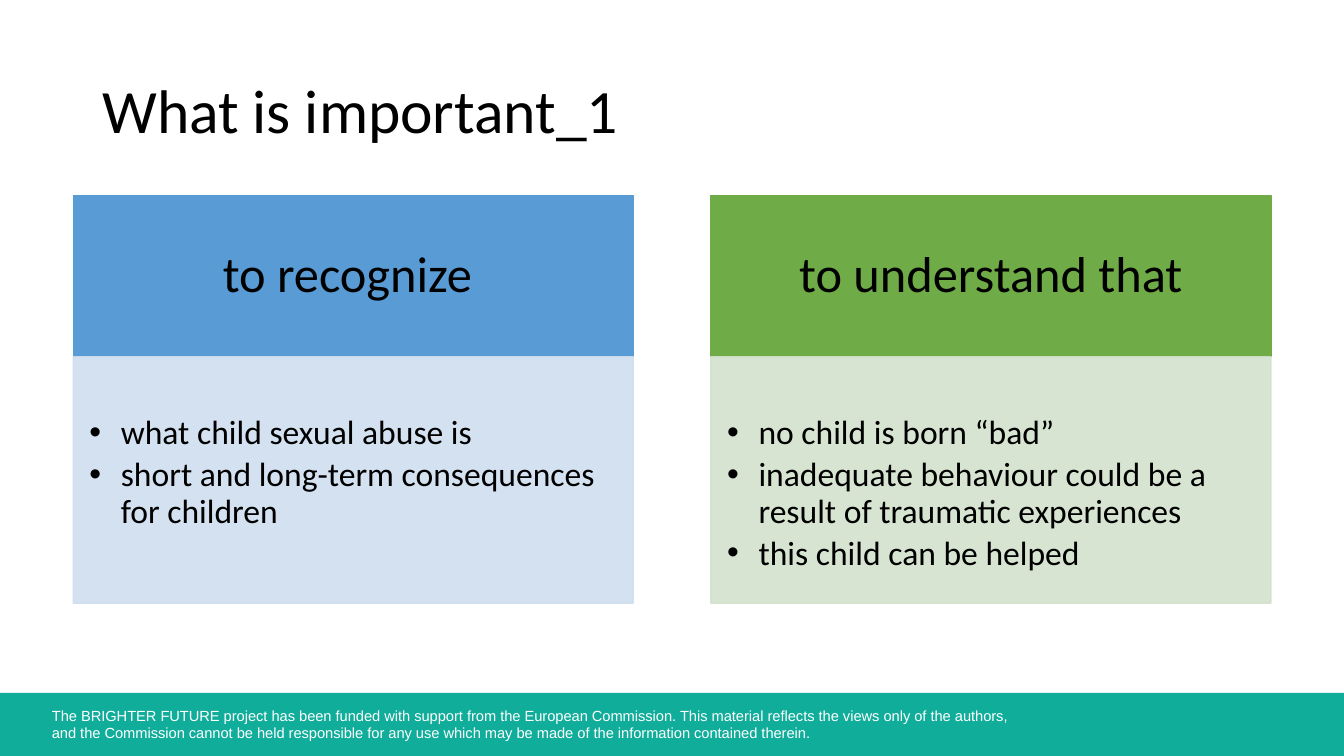
import pptx
import pptx.util
import pptx.dml.color
import pptx.enum.shapes
import pptx.enum.text
import pptx.oxml.ns
import lxml.etree

Pt = pptx.util.Pt
RGBColor = pptx.dml.color.RGBColor
PP_ALIGN = pptx.enum.text.PP_ALIGN
MSO_ANCHOR = pptx.enum.text.MSO_ANCHOR
qn = pptx.oxml.ns.qn

BLACK = RGBColor(0x00, 0x00, 0x00)
WHITE = RGBColor(0xFF, 0xFF, 0xFF)
TEAL = RGBColor(0x10, 0xAD, 0x9A)
BLUE = RGBColor(0x59, 0x9B, 0xD5)
PALE_BLUE = RGBColor(0xCF, 0xDE, 0xEF)
GREEN = RGBColor(0x6F, 0xAB, 0x46)
PALE_GREEN = RGBColor(0xD3, 0xE1, 0xCC)


def add_panel(left, top, width, height, color, opacity=100):
    panel = slide.shapes.add_shape(
        pptx.enum.shapes.MSO_SHAPE.RECTANGLE, Pt(left), Pt(top), Pt(width), Pt(height))
    panel.shadow.inherit = False
    panel.fill.solid()
    panel.fill.fore_color.rgb = color
    panel.line.color.rgb = color
    panel.line.width = Pt(1)
    if opacity < 100:
        for tint in panel.element.spPr.iter(qn("a:srgbClr")):
            lxml.etree.SubElement(tint, qn("a:alpha"), val=str(opacity * 1000))
    panel.text_frame.word_wrap = True
    return panel


def add_span(para, text, size, color=BLACK, font="Calibri"):
    span = para.add_run()
    span.text = text
    span.font.size = Pt(size)
    span.font.name = font
    span.font.color.rgb = color


deck = pptx.Presentation()
deck.slide_width = Pt(960)
deck.slide_height = Pt(540)
slide = deck.slides.add_slide(deck.slide_layouts[6])

footer = add_panel(0, 495, 960, 45, TEAL)
footer.line.fill.background()

notice = slide.shapes.add_textbox(Pt(30), Pt(501), Pt(720), Pt(32.5))
notice.text_frame.word_wrap = True
para = notice.text_frame.paragraphs[0]
add_span(para, "The BRIGHTER FUTURE project has been funded with support from the European "
         "Commission. This material reflects the views only of the authors, ", 10.5, WHITE, "Arial")
para.add_line_break()
add_span(para, "and the Commission cannot be held responsible for any use which may be made "
         "of the information contained therein.", 10.5, WHITE, "Arial")

title = slide.shapes.add_textbox(Pt(66), Pt(28.75), Pt(828), Pt(104.4))
title.text_frame.word_wrap = True
title.text_frame.vertical_anchor = MSO_ANCHOR.MIDDLE
para = title.text_frame.paragraphs[0]
para.line_spacing = 0.9
add_span(para, "What is important_1", 44)

columns = [
    ("to recognize ", BLUE, PALE_BLUE, [
        "what child sexual abuse is",
        "short and long-term consequences for children"]),
    ("to understand that", GREEN, PALE_GREEN, [
        "no child is born “bad”",
        "inadequate behaviour could be a result of traumatic experiences",
        "this child can be helped"]),
]
COLUMN_LEFT, COLUMN_STEP, COLUMN_WIDTH = 52.3, 455.5, 400
HEADING_TOP, HEADING_HEIGHT, LIST_HEIGHT = 139.5, 115.3, 176

for index, (heading, strong, pale, points) in enumerate(columns):
    left = COLUMN_LEFT + index * COLUMN_STEP

    header = add_panel(left, HEADING_TOP, COLUMN_WIDTH, HEADING_HEIGHT, strong)
    header.text_frame.vertical_anchor = MSO_ANCHOR.MIDDLE
    para = header.text_frame.paragraphs[0]
    para.alignment = PP_ALIGN.CENTER
    para.line_spacing = 0.9
    add_span(para, heading, 36)

    body = add_panel(left, HEADING_TOP + HEADING_HEIGHT, COLUMN_WIDTH, LIST_HEIGHT, pale, 89)
    frame = body.text_frame
    frame.vertical_anchor = MSO_ANCHOR.TOP
    frame.margin_left = Pt(11.5)
    frame.margin_right = Pt(16)
    frame.margin_top = Pt(42)
    frame.margin_bottom = Pt(0)
    for number, point in enumerate(points):
        para = frame.add_paragraph() if number else frame.paragraphs[0]
        props = para._p.get_or_add_pPr()
        props.set("marL", str(Pt(22.5)))
        props.set("indent", str(-Pt(22.5)))
        bullet_color = lxml.etree.SubElement(props, qn("a:buClr"))
        lxml.etree.SubElement(bullet_color, qn("a:srgbClr"), val=str(BLACK))
        lxml.etree.SubElement(props, qn("a:buFont"), typeface="Arial")
        lxml.etree.SubElement(props, qn("a:buChar"), char="•")
        para.alignment = PP_ALIGN.LEFT
        para.line_spacing = 0.9
        if number:
            para.space_before = Pt(4.2)
        add_span(para, point, 24)

deck.save("out.pptx")
